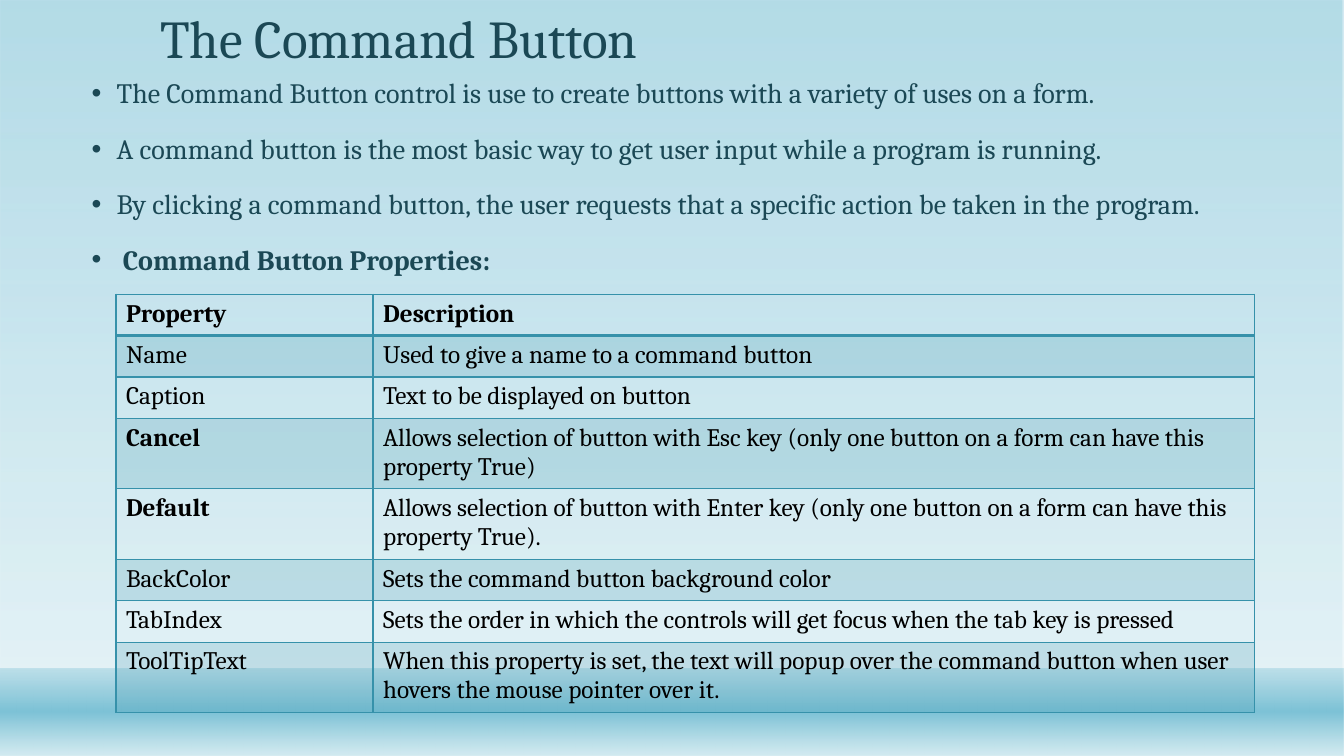
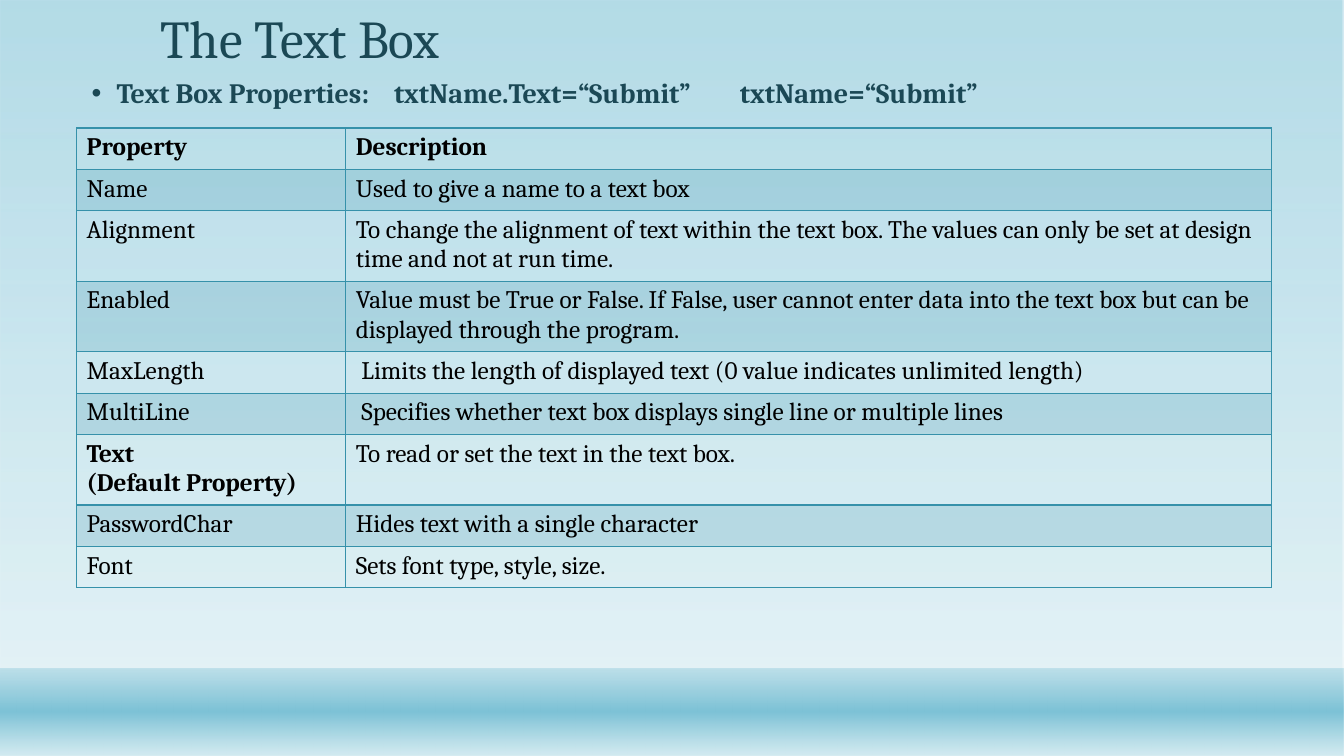
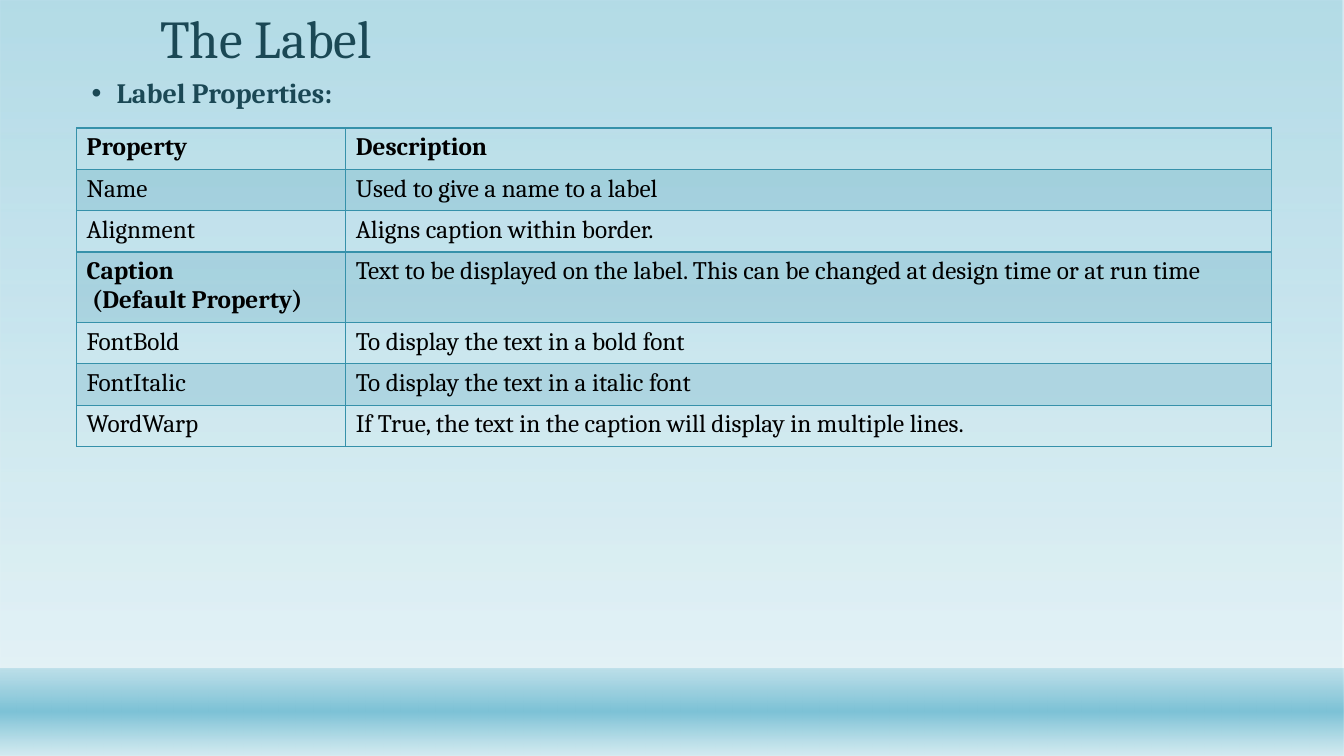
from pptx import Presentation
from pptx.dml.color import RGBColor
from pptx.enum.shapes import MSO_SHAPE
from pptx.enum.text import MSO_ANCHOR
from pptx.oxml.ns import qn
from pptx.util import Pt
from lxml import etree

RECT = MSO_SHAPE.RECTANGLE
BOTTOM = MSO_ANCHOR.BOTTOM
PX = 9144
FACE = "Cambria"
HEX = {"ink": "1B4855", "text": "000000", "line": "3691AA", "aqua": "7DC2D6", "pale": "D4EBF1"}

bands = [
    (0, 750, [(0, "aqua", 58), (88, "pale", 65)]),
    (663, 87, [(1, "aqua", 38), (49, "aqua", 100), (100, "pale", 89)]),
]

strong = {"Cancel", "Default", "Text\n(Default Property)", "Caption\n (Default Property)"}
head = ("Property", "Description")

deck = [
    {
        "title": "The Command Button",
        "points": [
            "The Command Button control is use to create buttons with a variety of uses on a form.",
            "A command button is the most basic way to get user input while a program is running.",
            "By clicking a command button, the user requests that a specific action be taken in the program.",
            " Command Button Properties:",
        ],
        "codes": [],
        "place": (115, 292),
        "cols": (255, 874),
        "rule": 2,
        "rows": [
            ("Name", "Used to give a name to a command button"),
            ("Caption", "Text to be displayed on button"),
            ("Cancel", "Allows selection of button with Esc key (only one button on a form can have this property True)"),
            ("Default", "Allows selection of button with Enter key (only one button on a form can have this property True)."),
            ("BackColor", "Sets the command button background color"),
            ("TabIndex", "Sets the order in which the controls will get focus when the tab key is pressed"),
            ("ToolTipText", "When this property is set, the text will popup over the command button when user hovers the mouse pointer over it."),
        ],
    },
    {
        "title": "The Text Box",
        "points": ["Text Box Properties:"],
        "codes": [(381, "txtName.Text=“Submit”"), (724, "txtName=“Submit”")],
        "place": (76, 127),
        "cols": (267, 918),
        "rule": 1,
        "rows": [
            ("Name", "Used to give a name to a text box"),
            ("Alignment", "To change the alignment of text within the text box. The values can only be set at design time and not at run time."),
            ("Enabled", "Value must be True or False. If False, user cannot enter data into the text box but can be displayed through the program."),
            ("MaxLength", " Limits the length of displayed text (0 value indicates unlimited length)"),
            ("MultiLine", " Specifies whether text box displays single line or multiple lines"),
            ("Text\n(Default Property)", "To read or set the text in the text box."),
            ("PasswordChar", "Hides text with a single character"),
            ("Font", "Sets font type, style, size."),
        ],
    },
    {
        "title": "The Label",
        "points": ["Label Properties:"],
        "codes": [],
        "place": (76, 127),
        "cols": (267, 918),
        "rule": 1,
        "rows": [
            ("Name", "Used to give a name to a label"),
            ("Alignment", "Aligns caption within border."),
            ("Caption\n (Default Property)", "Text to be displayed on the label. This can be changed at design time or at run time"),
            ("FontBold", "To display the text in a bold font"),
            ("FontItalic", "To display the text in a italic font"),
            ("WordWarp", "If True, the text in the caption will display in multiple lines."),
        ],
    },
]


def style(para, size, color, bold=False):
    font = para.font
    font.name, font.size, font.bold = FACE, Pt(size), bold
    font.color.rgb = RGBColor.from_string(HEX[color])


def tint(node, color, alpha):
    clr = etree.SubElement(node, qn("a:srgbClr"), val=HEX[color])
    etree.SubElement(clr, qn("a:alpha"), val=str(alpha * 1000))


prs = Presentation()
prs.slide_width, prs.slide_height = 1333 * PX, 750 * PX

for page in deck:
    slide = prs.slides.add_slide(prs.slide_layouts[6])
    shapes = slide.shapes

    for top, high, stops in bands:
        band = shapes.add_shape(RECT, 0, top * PX, prs.slide_width, high * PX)
        band.shadow.inherit = False
        band.line.fill.background()
        band.fill.gradient()
        band.fill.gradient_angle = 270
        ramp = band._element.spPr.find(qn("a:gradFill")).find(qn("a:gsLst"))
        ramp.clear()
        for pos, color, alpha in stops:
            tint(etree.SubElement(ramp, qn("a:gs"), pos=str(pos * 1000)), color, alpha)

    last = len(page["points"]) - 1
    texts = [
        (149, 7, 1095, 67, [page["title"]], 38),
        (76, 74, 1217, 53 + 55 * last, page["points"], 20),
    ]
    texts += [(left, 74, 340, 53, [code], 20) for left, code in page["codes"]]
    for left, top, wide, high, lines, size in texts:
        box = shapes.add_textbox(left * PX, top * PX, wide * PX, high * PX)
        frame = box.text_frame
        frame.word_wrap = True
        if size == 38:
            frame.vertical_anchor = BOTTOM
        frame.text = "\n".join(lines)
        for num, para in enumerate(frame.paragraphs):
            para.line_spacing = 0.9
            if num:
                para.space_before = Pt(18)
            if lines is page["points"]:
                props = para._p.get_or_add_pPr()
                props.set("marL", str(30 * PX))
                props.set("indent", str(-25 * PX))
                etree.SubElement(props, qn("a:buFont"), typeface="Arial")
                etree.SubElement(props, qn("a:buChar"), char="•")
            style(para, size, "ink", size == 20 and num == len(lines) - 1)

    rows = [head] + page["rows"]
    left, top = page["place"]
    cols = page["cols"]
    grid = shapes.add_table(len(rows), 2, left * PX, top * PX, sum(cols) * PX, 41 * len(rows) * PX).table
    grid.horz_banding = False
    for col, wide in zip(grid.columns, cols):
        col.width = wide * PX
    for y, row in enumerate(rows):
        for x, text in enumerate(row):
            cell = grid.cell(y, x)
            cell.text = text
            for para in cell.text_frame.paragraphs:
                style(para, 18, "text", y == 0 or text in strong)
            props = cell._tc.get_or_add_tcPr()
            for side in ("lnL", "lnR", "lnT", "lnB"):
                thick = (y, side) in ((0, "lnB"), (1, "lnT"))
                width = Pt(page["rule"] if thick else 1)
                edge = etree.SubElement(props, qn("a:" + side), w=str(width))
                tint(etree.SubElement(edge, qn("a:solidFill")), "line", 100)
            if y % 2:
                tint(etree.SubElement(props, qn("a:solidFill")), "line", 20)
            else:
                cell.fill.background()

prs.save("out.pptx")
